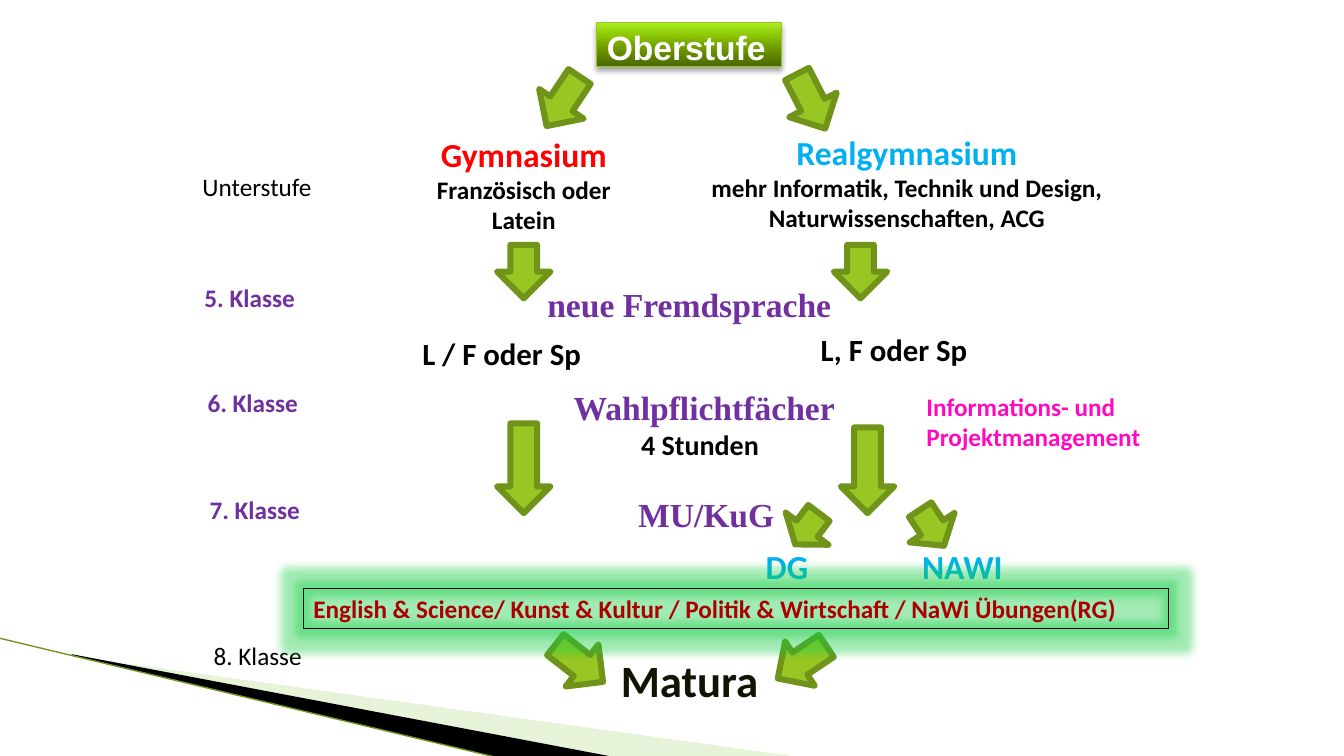
from dataclasses import dataclass

from lxml import etree
from pptx import Presentation
from pptx.dml.color import RGBColor
from pptx.enum.shapes import MSO_CONNECTOR, MSO_SHAPE
from pptx.enum.text import MSO_ANCHOR, PP_ALIGN
from pptx.oxml import parse_xml
from pptx.oxml.ns import nsdecls, qn
from pptx.util import Inches, Pt


@dataclass(frozen=True)
class Theme:
    body: str = "Calibri"
    serif: str = "Times New Roman"
    sans: str = "Arial"
    small: int = 18
    medium: int = 20
    option: int = 22
    heading: int = 24
    final: int = 32
    black: str = "000000"
    white: str = "FFFFFF"
    red: str = "FF0000"
    blue: str = "00B0F0"
    purple: str = "7030A0"
    pink: str = "FF0BBF"
    crimson: str = "AC0000"
    ink: str = "0F1404"
    green: str = "98C723"
    olive: str = "70931A"
    pale: str = "C5E19F"
    glow: str = "17CE44"
    gradient: tuple = ((0, "496700"), (50, "76A500"), (70, "8DC804"), (100, "AAEE25"))


T = Theme()


def rgb(value):
    return RGBColor.from_string(value)


def write(sp, lines, font=T.body, bold=True, center=False):
    tf = sp.text_frame
    tf.word_wrap = True
    tf.vertical_anchor = MSO_ANCHOR.TOP
    for i, (text, size, color) in enumerate(lines):
        p = tf.add_paragraph() if i else tf.paragraphs[0]
        p.alignment = PP_ALIGN.CENTER if center else PP_ALIGN.LEFT
        p.add_run().text = text
        p.font.name = font
        p.font.size = Pt(size)
        p.font.bold = bold
        p.font.color.rgb = rgb(color)


def add_text(s, box, *lines, **style):
    write(s.shapes.add_textbox(*map(Inches, box)), lines, **style)


def add_block(s, kind, box, line, width):
    sp = s.shapes.add_shape(kind, *map(Inches, box))
    sp.shadow.inherit = False
    sp.line.color.rgb = rgb(line)
    sp.line.width = Pt(width)
    return sp


def add_arrow(s, left, top, height, rotation=0):
    sp = add_block(s, MSO_SHAPE.DOWN_ARROW, (left, top, 0.53, height), T.olive, 4.33)
    sp.fill.solid()
    sp.fill.fore_color.rgb = rgb(T.green)
    sp.rotation = rotation


def add_wedge(s, points, color, alpha=100):
    start, *rest = [(Inches(x), Inches(y)) for x, y in points]
    fb = s.shapes.build_freeform(*start)
    fb.add_line_segments(rest)
    sp = fb.convert_to_shape()
    sp.shadow.inherit = False
    sp.line.fill.background()
    sp.fill.solid()
    sp.fill.fore_color.rgb = rgb(color)
    clr = sp.fill._xPr.find(qn("a:solidFill"))[0]
    etree.SubElement(clr, qn("a:alpha"), val=str(alpha * 1000))


def add_edge(s, x1, y1, x2, y2):
    line = s.shapes.add_connector(MSO_CONNECTOR.STRAIGHT, *map(Inches, (x1, y1, x2, y2)))
    line.line.color.rgb = rgb(T.olive)
    line.line.width = Pt(0.95)
    etree.SubElement(line._element.spPr, qn("a:effectLst"))


def add_effect(sp, tag, color, alpha, **attrs):
    effects = sp._element.spPr.find(qn("a:effectLst"))
    effect = etree.SubElement(effects, qn(tag), **attrs)
    clr = etree.SubElement(effect, qn("a:srgbClr"), val=color)
    etree.SubElement(clr, qn("a:alpha"), val=str(alpha * 1000))


def add_title(s, text):
    sp = add_block(s, MSO_SHAPE.RECTANGLE, (5.92, 0.22, 1.83, 0.44), T.green, 0.75)
    stops = "".join(f'<a:gs pos="{pos * 1000}"><a:srgbClr val="{c}"/></a:gs>'
                    for pos, c in T.gradient)
    sp._element.spPr.find(qn("a:prstGeom")).addnext(parse_xml(
        f'<a:gradFill {nsdecls("a")} rotWithShape="1"><a:gsLst>{stops}</a:gsLst>'
        '<a:lin ang="16200000" scaled="0"/></a:gradFill>'))
    add_effect(sp, "a:outerShdw", T.black, 35, blurRad=str(Pt(4)), dist=str(Pt(3)),
               dir="5400000", rotWithShape="0")
    write(sp, [(text, T.heading, T.white)], font=T.sans)


def add_electives(s, text):
    sp = add_block(s, MSO_SHAPE.RECTANGLE, (3.01, 5.84, 8.58, 0.4), T.black, 0.75)
    sp.fill.background()
    add_effect(sp, "a:glow", T.glow, 40, rad=str(Pt(11)))
    write(sp, [(text, T.small, T.crimson)])


def main():
    prs = Presentation()
    prs.slide_width, prs.slide_height = Inches(13.33), Inches(7.5)
    s = prs.slides.add_slide(prs.slide_layouts[6])

    add_wedge(s, [(0.73, 6.51), (7.93, 7.51), (6.08, 7.51), (0.73, 6.5)], T.pale, 40)
    add_wedge(s, [(0.71, 6.49), (6.09, 7.51), (4.96, 7.52), (0.72, 6.5)], T.black)
    add_edge(s, -0.01, 6.33, 4.95, 7.52)

    for arrow in [(5.32, 0.71, 0.59, 33.7), (7.78, 0.7, 0.61, 332.7),
                  (4.93, 2.43, 0.53), (8.27, 2.43, 0.53),
                  (4.93, 4.2, 0.89), (8.34, 4.24, 0.85),
                  (7.74, 5.05, 0.39, 37), (8.98, 5.02, 0.43, 326.6),
                  (5.48, 6.28, 0.6, 308), (7.69, 6.28, 0.58, 56.1)]:
        add_arrow(s, *arrow)

    for left, top, width, text, color in [(1.91, 1.65, 2.2, "Unterstufe", T.black),
                                          (1.93, 2.75, 1.26, "5. Klasse", T.purple),
                                          (1.96, 3.79, 1.12, "6. Klasse", T.purple),
                                          (1.98, 4.86, 1.17, "7. Klasse", T.purple),
                                          (2.02, 6.3, 1.08, "8. Klasse", T.black)]:
        add_text(s, (left, top, width, 0.4), (text, T.small, color), bold=color == T.purple)

    add_text(s, (4.17, 1.28, 2.05, 1.11), ("Gymnasium", T.heading, T.red),
             ("Französisch oder Latein", T.small, T.black), center=True)
    add_text(s, (6.74, 1.26, 4.51, 1.11), ("Realgymnasium", T.heading, T.blue),
             ("mehr Informatik, Technik und Design, Naturwissenschaften, ACG",
              T.small, T.black), center=True)
    add_text(s, (3.32, 3.27, 3.31, 0.47), ("L / F oder Sp", T.option, T.black), center=True)
    add_text(s, (8.04, 3.23, 2.04, 0.47), ("L, F oder Sp", T.option, T.black))
    add_text(s, (9.09, 3.83, 2.38, 0.71),
             ("Informations- und Projektmanagement", T.small, T.pink))
    add_text(s, (6.26, 4.19, 1.49, 0.44), ("4 Stunden", T.medium, T.black))
    add_text(s, (7.28, 5.37, 1.05, 0.51), ("DG", T.heading, T.blue), center=True)
    add_text(s, (8.8, 5.37, 1.49, 0.51), ("NAWI", T.heading, T.blue), center=True)
    add_text(s, (5.83, 6.43, 2.02, 0.64), ("Matura", T.final, T.ink), center=True)

    for left, top, width, text in [(5.33, 2.77, 3.06, "neue Fremdsprache"),
                                   (5.59, 3.79, 2.83, "Wahlpflichtfächer"),
                                   (6.23, 4.85, 2.08, "MU/KuG")]:
        add_text(s, (left, top, width, 0.51), (text, T.heading, T.purple), font=T.serif)

    add_electives(s, "English & Science/ Kunst & Kultur / Politik & Wirtschaft / "
                     "NaWi Übungen(RG)")
    add_title(s, "Oberstufe")
    prs.save("out.pptx")


if __name__ == "__main__":
    main()
